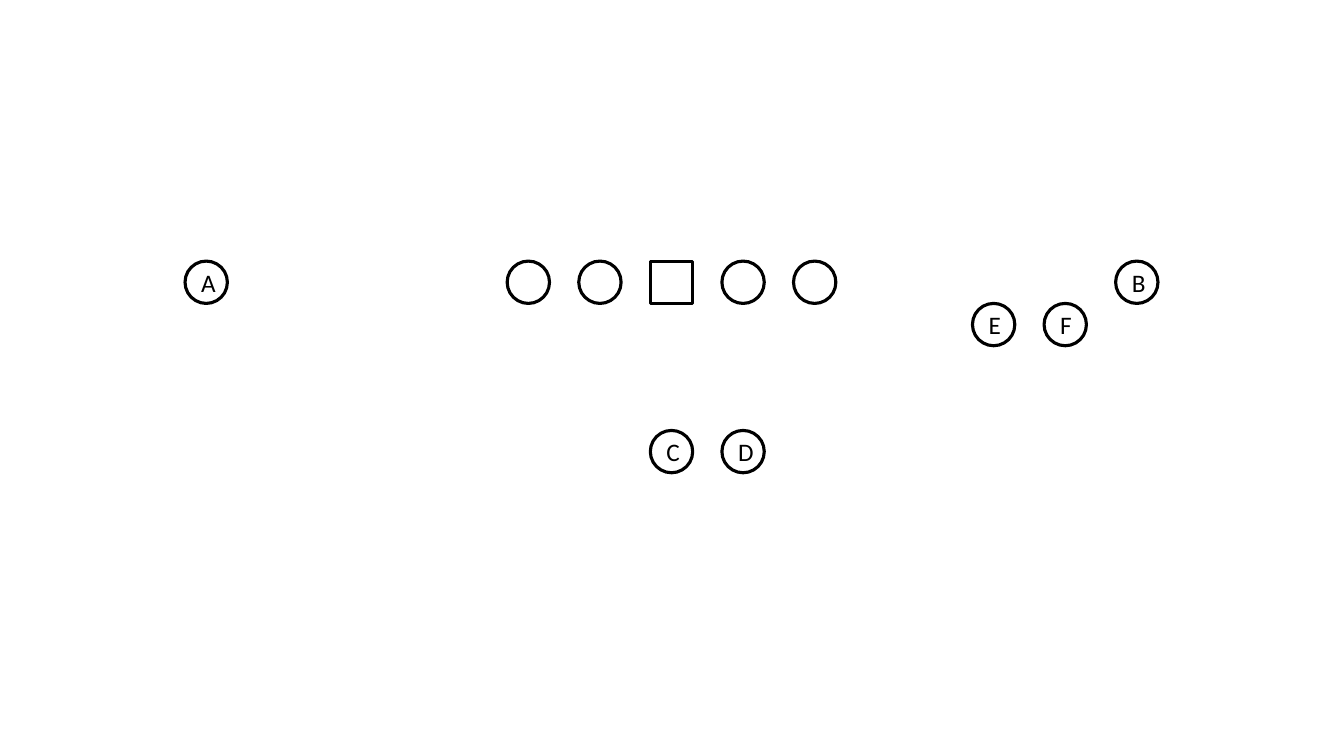
from pptx import Presentation
from pptx.dml.color import RGBColor
from pptx.enum.shapes import MSO_SHAPE
from pptx.enum.text import MSO_ANCHOR, PP_ALIGN
from pptx.util import Inches, Pt

BLACK = RGBColor(0, 0, 0)

# Players as (label, columns from the center, rows behind the line)
CENTER = ("", 0, 0)
LINEMEN = [("", -1, 0), ("", 1, 0), ("", -2, 0), ("", 2, 0)]
BACKS = [("C", 0, 4), ("D", 1, 4)]
RECEIVERS = [("A", -6.5, 0), ("B", 6.5, 0), ("F", 5.5, 1), ("E", 4.5, 1)]

SIZE = 0.42
CENTER_LEFT, LINE_TOP = 6.45, 2.59
COLUMN_STEP, ROW_STEP = 0.71, 0.42


def add_player(slide, player, shape_type=MSO_SHAPE.OVAL):
    label, column, row = player
    sp = slide.shapes.add_shape(
        shape_type,
        Inches(CENTER_LEFT + column * COLUMN_STEP),
        Inches(LINE_TOP + row * ROW_STEP),
        Inches(SIZE), Inches(SIZE))
    sp.shadow.inherit = False
    sp.fill.background()
    sp.line.color.rgb = BLACK
    sp.line.width = Pt(2.25)
    if label:
        tf = sp.text_frame
        tf.vertical_anchor = MSO_ANCHOR.MIDDLE
        p = tf.paragraphs[0]
        p.alignment = PP_ALIGN.JUSTIFY
        r = p.add_run()
        r.text = label
        r.font.name = "Calibri"
        r.font.size = Pt(18)
        r.font.color.rgb = BLACK


def main():
    prs = Presentation()
    prs.slide_width, prs.slide_height = Inches(13.33), Inches(7.5)
    slide = prs.slides.add_slide(prs.slide_layouts[6])
    add_player(slide, CENTER, MSO_SHAPE.RECTANGLE)
    for player in LINEMEN + BACKS + RECEIVERS:
        add_player(slide, player)
    prs.save("out.pptx")


if __name__ == "__main__":
    main()
